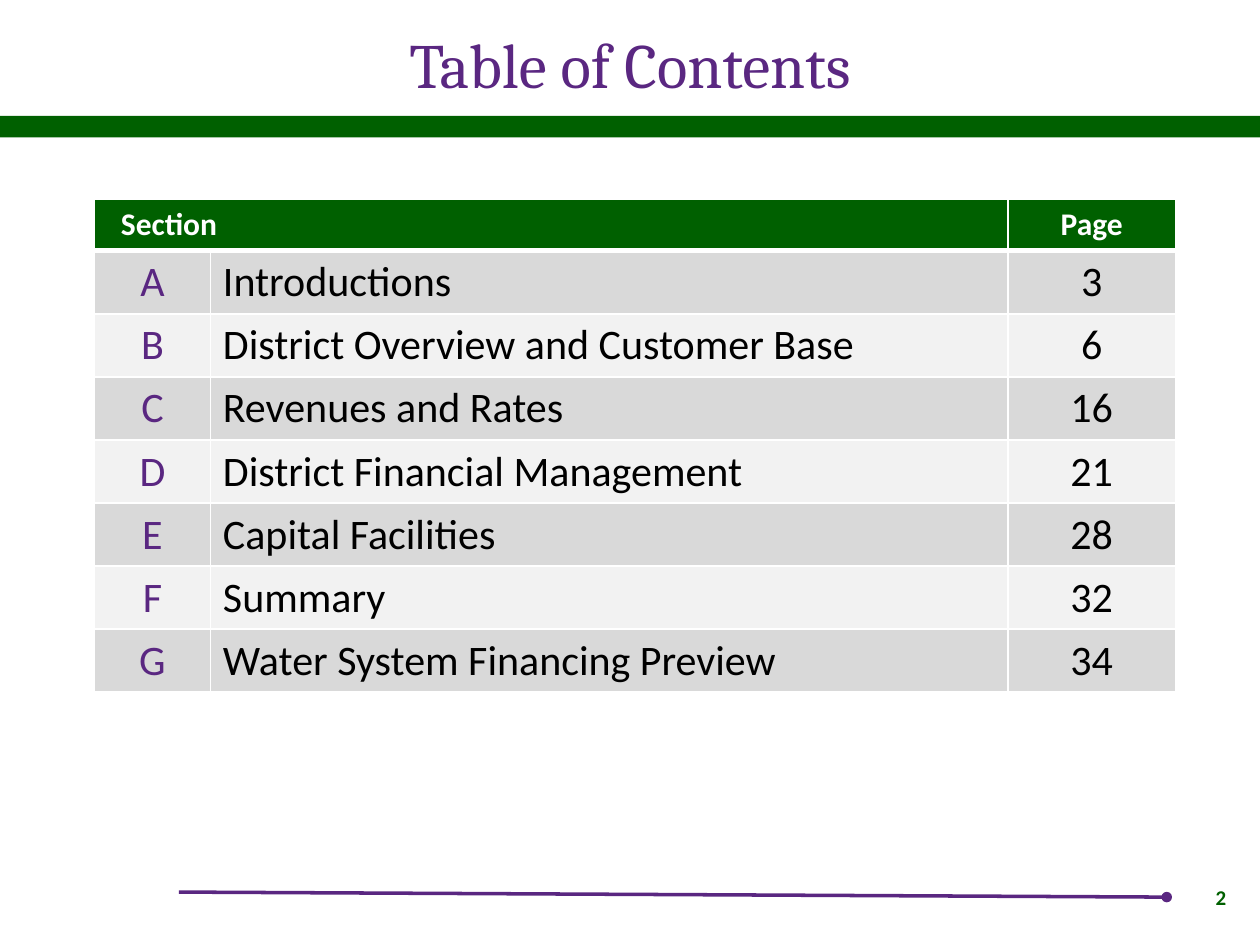
from lxml.etree import SubElement
from pptx import Presentation
from pptx.dml.color import RGBColor
from pptx.enum.shapes import MSO_CONNECTOR, MSO_SHAPE
from pptx.enum.text import MSO_ANCHOR, PP_ALIGN
from pptx.oxml.ns import qn
from pptx.util import Inches, Pt

# Content
TITLE = "Table of Contents"
PAGE_NUMBER = "2"
HEADER = ("Section", "", "Page")
SECTIONS = [
    ("A", "Introductions", "3"),
    ("B", "District Overview and Customer Base", "6"),
    ("C", "Revenues and Rates", "16"),
    ("D", "District Financial Management", "21"),
    ("E", "Capital Facilities", "28"),
    ("F", "Summary", "32"),
    ("G", "Water System Financing Preview", "34"),
]

# Style
COLORS = {"green": "006000", "purple": "5A2781", "white": "FFFFFF",
          "black": "000000", "dark_band": "D9D9D9", "light_band": "F2F2F2"}
COLUMN_WIDTHS = (0.92, 6.33, 1.33)
COLUMN_ALIGNS = (PP_ALIGN.CENTER, PP_ALIGN.LEFT, PP_ALIGN.CENTER)
COLUMN_COLORS = ("purple", "black", "black")
HEADER_HEIGHT, SECTION_HEIGHT = 0.41, 0.5


def rgb(name):
    return RGBColor.from_string(COLORS[name])


def write(frame, text, size, color, align, font="Calibri", bold=False):
    frame.text = text
    paragraph = frame.paragraphs[0]
    paragraph.alignment = align
    for run in paragraph.runs:
        run.font.name = font
        run.font.size = Pt(size)
        run.font.bold = bold
        run.font.color.rgb = rgb(color)


def add_text(slide, box, *args, **style):
    frame = slide.shapes.add_textbox(*map(Inches, box)).text_frame
    frame.word_wrap = True
    frame.vertical_anchor = MSO_ANCHOR.MIDDLE
    write(frame, *args, **style)


def set_borders(cell, bottom=1, top=1):
    properties = cell._tc.get_or_add_tcPr()
    for side, width in (("L", 1), ("R", 1), ("T", top), ("B", bottom)):
        line = SubElement(properties, qn(f"a:ln{side}"), w=str(Pt(width)))
        fill = SubElement(line, qn("a:solidFill"))
        SubElement(fill, qn("a:srgbClr"), val=COLORS["white"])


def set_fill(cell, color):
    cell.fill.solid()
    cell.fill.fore_color.rgb = rgb(color)


prs = Presentation()
prs.slide_width, prs.slide_height = Inches(10), Inches(7.5)
slide = prs.slides.add_slide(prs.slide_layouts[6])

# Green bar under the title
bar = slide.shapes.add_shape(MSO_SHAPE.RECTANGLE, 0, Inches(0.92), Inches(10), Inches(0.17))
bar.shadow.inherit = False
bar.fill.solid()
bar.fill.fore_color.rgb = rgb("green")
bar.line.fill.background()

# Footer rule with a round end
rule = slide.shapes.add_connector(
    MSO_CONNECTOR.STRAIGHT, Inches(1.42), Inches(7.08), Inches(9.26), Inches(7.12))
rule.line.color.rgb = rgb("purple")
rule.line.width = Pt(2)
SubElement(rule.line._get_or_add_ln(), qn("a:tailEnd"), type="oval")
SubElement(rule._element.spPr, qn("a:effectLst"))

# Title
add_text(slide, (0.5, 0.17, 9, 0.67), TITLE, 36, "purple", PP_ALIGN.CENTER, font="Cambria")

# Contents table
table_height = HEADER_HEIGHT + SECTION_HEIGHT * len(SECTIONS)
contents = slide.shapes.add_table(
    len(SECTIONS) + 1, len(HEADER), Inches(0.75), Inches(1.58),
    Inches(sum(COLUMN_WIDTHS)), Inches(table_height)).table
for column, width in zip(contents.columns, COLUMN_WIDTHS):
    column.width = Inches(width)

contents.rows[0].height = Inches(HEADER_HEIGHT)
for c, label in enumerate(HEADER):
    cell = contents.cell(0, c)
    align = PP_ALIGN.CENTER if label == "Page" else PP_ALIGN.LEFT
    write(cell.text_frame, label, 18, "white", align, bold=True)
    set_borders(cell, bottom=3)
    set_fill(cell, "green")
contents.cell(0, 0).merge(contents.cell(0, 1))
contents.cell(0, 0).margin_left = Inches(0.21)

for r, section in enumerate(SECTIONS, start=1):
    contents.rows[r].height = Inches(SECTION_HEIGHT)
    for c, text in enumerate(section):
        cell = contents.cell(r, c)
        write(cell.text_frame, text, 24, COLUMN_COLORS[c], COLUMN_ALIGNS[c])
        set_borders(cell, top=3 if r == 1 else 1)
        set_fill(cell, "dark_band" if r % 2 else "light_band")

# Page number
add_text(slide, (9.33, 6.92, 0.5, 0.4), PAGE_NUMBER, 12, "green", PP_ALIGN.RIGHT, bold=True)

prs.save("out.pptx")
